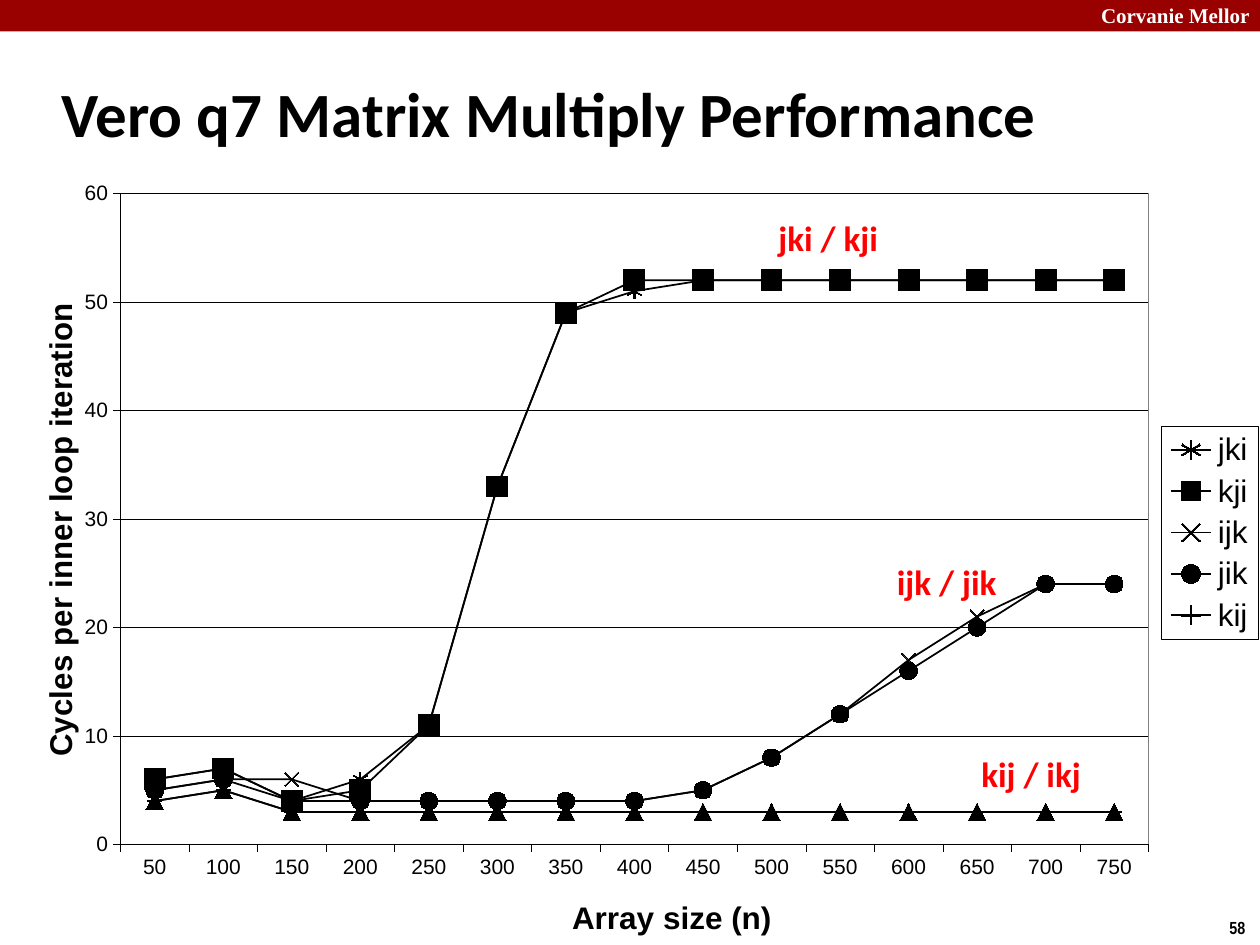
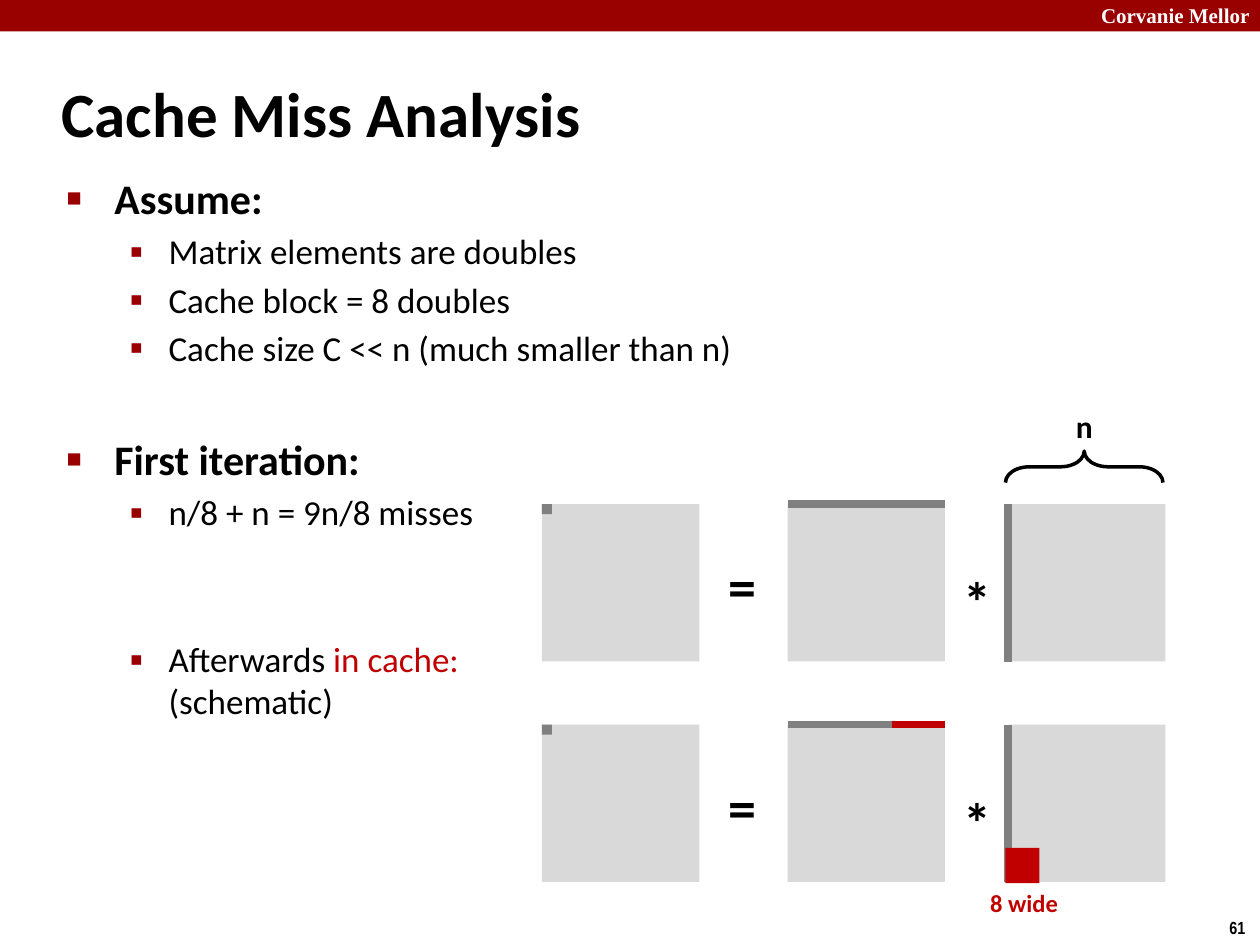
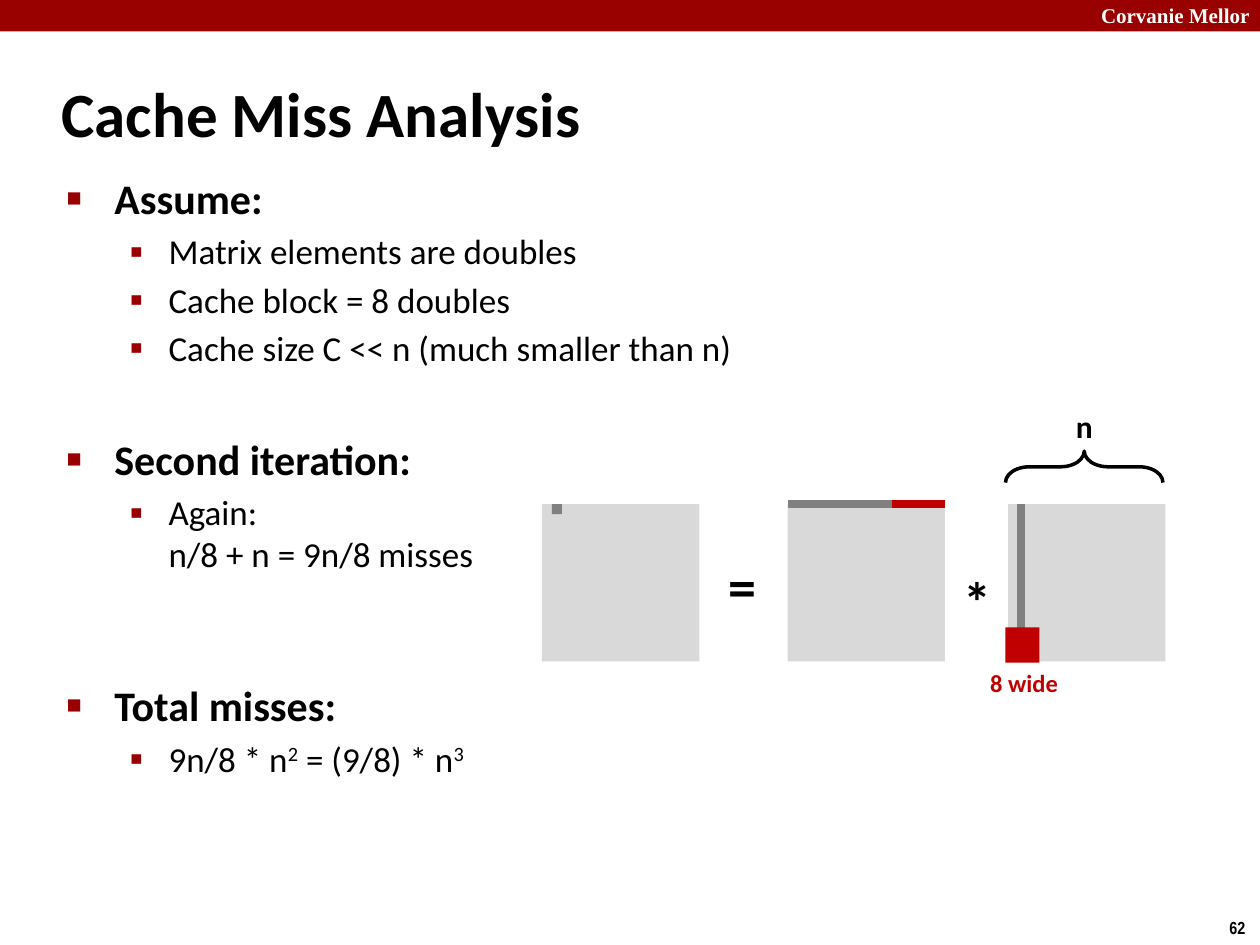
from pptx import Presentation
from pptx.chart.data import CategoryChartData
from pptx.dml.color import RGBColor
from pptx.enum.chart import XL_CHART_TYPE, XL_LEGEND_POSITION, XL_MARKER_STYLE, XL_TICK_MARK
from pptx.enum.shapes import MSO_CONNECTOR, MSO_SHAPE
from pptx.enum.text import MSO_ANCHOR
from pptx.oxml import parse_xml
from pptx.oxml.ns import nsdecls, qn
from pptx.util import Inches, Pt

BAND_RED, CACHE_RED, LABEL_RED = "990000", "C00000", "FF0000"
BLACK, WHITE, MATRIX_GREY, ACCESS_GREY = "000000", "FFFFFF", "D9D9D9", "808080"
SIDE = 1.25  # side of a matrix, inches

# bullet, its size in %, left margin and hanging indent in inches, font
LEVELS = [
    ("■", 60, 0.38, 0.38, {"size": Pt(24), "bold": True}),
    ("▪", 110, 0.81, 0.31, {"size": Pt(20), "bold": False}),
]

ASSUMPTIONS = [
    (0, 0, ["Assume:"]),
    (1, 4, ["Matrix elements are doubles"]),
    (1, 3.6, ["Cache block = 8 doubles"]),
    (1, 3.6, ["Cache size C << n (much smaller than n)"]),
]
FIRST_ITERATION = [
    (0, 37, ["First iteration:"]),
    (1, 4, ["n/8 + n = 9n/8 misses"]),
    (1, 60, ["Afterwards ", ("in cache:\n", "red"), "(schematic)"]),
]
SECOND_ITERATION = [
    (0, 37, ["Second iteration:"]),
    (1, 4, ["Again:\nn/8 + n = 9n/8 misses"]),
    (0, 60, ["Total misses:"]),
    (1, 4, ["9n/8 * n", ("2", "super"), " = (9/8) * n", ("3", "super")]),
]

ARRAY_SIZES = range(50, 751, 50)
# loop order: marker, marker size, cycles per iteration
LOOP_ORDERS = {
    "jki": ("STAR", 8, [6, 7, 4, 6, 11, 33, 49, 51] + [52] * 7),
    "kji": ("SQUARE", 12, [6, 7, 4, 5, 11, 33, 49] + [52] * 8),
    "ijk": ("X", 8, [5, 6, 6, 4, 4, 4, 4, 4, 5, 8, 12, 17, 21, 24, 24]),
    "jik": ("CIRCLE", 10, [5, 6, 4, 4, 4, 4, 4, 4, 5, 8, 12, 16, 20, 24, 24]),
    "kij": ("PLUS", 8, [4, 5] + [3] * 13),
    "ikj": ("TRIANGLE", 10, [4, 5] + [3] * 13),
}


def rgb(value):
    return RGBColor.from_string(value)


def set_font(font, color, **values):
    for name, value in values.items():
        setattr(font, name, value)
    font.color.rgb = rgb(color)


def set_line(line, color, width):
    line.color.rgb = rgb(color)
    line.width = Pt(width)


def place(element, index, inner=False, **fractions):
    """Give a chart part a manual layout, as fractions of the chart."""
    for layout in element.findall(qn("c:layout")):
        element.remove(layout)
    target = '<c:layoutTarget val="inner"/>' if inner else ""
    modes = "".join(f'<c:{k}Mode val="edge"/>' for k in fractions if k in "xy")
    values = "".join(f'<c:{k} val="{v}"/>' for k, v in fractions.items())
    element.insert(index, parse_xml(
        f'<c:layout {nsdecls("c")}><c:manualLayout>{target}{modes}{values}'
        '</c:manualLayout></c:layout>'))


class Deck:
    """Holds the presentation, its style and the slide being filled."""

    def __init__(self):
        self.presentation = Presentation()
        self.presentation.slide_width = Inches(10)
        self.presentation.slide_height = Inches(7.5)
        self.shapes = None

    def slide(self, title, number):
        layout = self.presentation.slide_layouts[6]
        self.shapes = self.presentation.slides.add_slide(layout).shapes
        self.block(0, 0, 10, 0.25, BAND_RED)
        self.label("Corvanie Mellor", 8.64, -0.03, 1.43, 0.3, 12, WHITE, "Times New Roman")
        self.label(str(number), 9.66, 7.23, 0.34, 0.27, 10, font="Arial Narrow")
        self.label(title, 0.39, 0.48, 8.3, 0.83, 36, anchor=MSO_ANCHOR.MIDDLE)

    def label(self, text, left, top, width, height, size, color=BLACK,
              font="Calibri", anchor=MSO_ANCHOR.TOP):
        frame = self.shapes.add_textbox(*map(Inches, (left, top, width, height))).text_frame
        frame.word_wrap = False
        frame.vertical_anchor = anchor
        run = frame.paragraphs[0].add_run()
        run.text = text
        set_font(run.font, color, name=font, size=Pt(size), bold=True)

    def block(self, left, top, width, height, color):
        block = self.shapes.add_shape(
            MSO_SHAPE.RECTANGLE, *map(Inches, (left, top, width, height)))
        block.shadow.inherit = False
        block.fill.solid()
        block.fill.fore_color.rgb = rgb(color)
        block.line.fill.background()

    def stroke(self, x1, y1, x2, y2, color):
        stroke = self.shapes.add_connector(
            MSO_CONNECTOR.STRAIGHT, *map(Inches, (x1, y1, x2, y2)))
        set_line(stroke.line, color, 4.5)
        stroke._element.spPr.append(parse_xml(f'<a:effectLst {nsdecls("a")}/>'))

    def bullets(self, items):
        """Each item is a level, the space before in points, and its runs."""
        frame = self.shapes.add_textbox(
            *map(Inches, (0.43, 1.32, 8.64, 3.34))).text_frame
        frame.word_wrap = True
        for i, (level, gap, runs) in enumerate(items):
            paragraph = frame.add_paragraph() if i else frame.paragraphs[0]
            paragraph.level = level
            paragraph.space_before = Pt(gap)
            bullet, percent, margin, hanging, font = LEVELS[level]
            properties = paragraph._p.get_or_add_pPr()
            properties.set("marL", str(Inches(margin)))
            properties.set("indent", str(-Inches(hanging)))
            for xml in (f'<a:buClr {nsdecls("a")}><a:srgbClr val="{BAND_RED}"/></a:buClr>',
                        f'<a:buSzPct {nsdecls("a")} val="{percent * 1000}"/>',
                        f'<a:buFont {nsdecls("a")} typeface="Arial"/>',
                        f'<a:buChar {nsdecls("a")} char="{bullet}"/>'):
                properties.append(parse_xml(xml))
            for piece in runs:
                text, style = (piece, "") if isinstance(piece, str) else piece
                for j, part in enumerate(text.split("\n")):
                    if j:
                        paragraph.add_line_break()
                    if not part:
                        continue
                    run = paragraph.add_run()
                    run.text = part
                    set_font(run.font, CACHE_RED if style == "red" else BLACK,
                             name="Calibri", **font)
                    if style == "super":
                        run._r.get_or_add_rPr().set("baseline", "30000")

    def width_brace(self):
        brace = self.shapes.add_shape(
            MSO_SHAPE.LEFT_BRACE, *map(Inches, (8.48, 3.08, 0.25, SIDE)))
        brace.shadow.inherit = False
        brace.rotation = 90
        brace.adjustments[0] = 0.75
        brace.fill.background()
        set_line(brace.line, BLACK, 2)
        self.label("n", 8.44, 3.18, 0.34, 0.4, 18)

    def product(self, top, cell=4.3, column=8, cached=True):
        """Draw C = A * B with the cell, row and column being accessed."""
        result, row, factor = 4.3, 6.25, 8
        for left in (result, row, factor):
            self.block(left, top, SIDE, SIDE, MATRIX_GREY)
        self.stroke(row, top, row + SIDE, top, ACCESS_GREY)
        self.stroke(column, top, column, top + SIDE, ACCESS_GREY)
        self.block(cell, top, 0.08, 0.08, ACCESS_GREY)
        self.label("=", 5.68, top + 0.33, 0.43, 0.64, 32)
        self.label("*", 7.55, top + 0.45, 0.43, 0.64, 32)
        if cached:
            self.stroke(7.08, top, row + SIDE, top, CACHE_RED)
            self.block(7.98, top + 0.98, 0.27, 0.28, CACHE_RED)
            self.label("8 wide", 7.76, top + SIDE, 0.74, 0.34, 14, CACHE_RED)

    def cycles_chart(self):
        data = CategoryChartData()
        data.categories = [str(size) for size in ARRAY_SIZES]
        for order, (_, _, cycles) in LOOP_ORDERS.items():
            data.add_series(order, cycles)
        chart = self.shapes.add_chart(
            XL_CHART_TYPE.LINE_MARKERS, *map(Inches, (0.17, 1.29, 9.83, 6.21)), data).chart
        chart.has_title = False
        set_font(chart.font, BLACK, name="Arial", size=Pt(10))

        plot = chart.plots[0]
        plot.vary_by_categories = False
        for series, (marker, size, _) in zip(plot.series, LOOP_ORDERS.values()):
            series.smooth = False
            set_line(series.format.line, BLACK, 1)
            series.marker.style = XL_MARKER_STYLE[marker]
            series.marker.size = size
            series.marker.format.fill.solid()
            series.marker.format.fill.fore_color.rgb = rgb(BLACK)
            set_line(series.marker.format.line, BLACK, 0.75)

        for axis, title, x, y in (
                (chart.category_axis, "Array size (n)", 0.44, 0.94),
                (chart.value_axis, "Cycles per inner loop iteration", 0.01, 0.18)):
            axis.major_tick_mark = XL_TICK_MARK.OUTSIDE
            axis.minor_tick_mark = XL_TICK_MARK.NONE
            set_line(axis.format.line, BLACK, 0.25)
            set_font(axis.tick_labels.font, BLACK, name="Arial", size=Pt(12))
            run = axis.axis_title.text_frame.paragraphs[0].add_run()
            run.text = title
            set_font(run.font, BLACK, name="Arial", size=Pt(18), bold=True)
            place(axis.axis_title._element, 1, x=x, y=y)
        scale = {"minimum_scale": 0, "maximum_scale": 60, "major_unit": 10}
        for name, value in scale.items():
            setattr(chart.value_axis, name, value)
        set_line(chart.value_axis.major_gridlines.format.line, BLACK, 0.25)

        area = chart._chartSpace.chart.plotArea
        place(area, 0, inner=True, x=0.08, y=0.04, w=0.83, h=0.84)
        area.append(parse_xml(
            f'<c:spPr {nsdecls("c", "a")}><a:solidFill><a:srgbClr val="{WHITE}"/></a:solidFill>'
            f'<a:ln w="{Pt(0.75)}"><a:solidFill><a:srgbClr val="{ACCESS_GREY}"/></a:solidFill>'
            '</a:ln></c:spPr>'))
        self.cycles_legend(chart)

    def cycles_legend(self, chart):
        """List every loop order but the last, which has no entry."""
        chart.has_legend = True
        legend = chart.legend
        legend.position = XL_LEGEND_POSITION.RIGHT
        legend.include_in_layout = False
        set_font(legend.font, BLACK, name="Arial", size=Pt(18))
        element = legend._element
        element.insert(1, parse_xml(
            f'<c:legendEntry {nsdecls("c")}><c:idx val="{len(LOOP_ORDERS) - 1}"/>'
            '<c:delete val="1"/></c:legendEntry>'))
        place(element, 2, x=0.92, y=0.34)
        element.find(qn("c:txPr")).addprevious(parse_xml(
            f'<c:spPr {nsdecls("c", "a")}><a:ln w="{Pt(0.25)}"><a:solidFill>'
            f'<a:srgbClr val="{BLACK}"/></a:solidFill></a:ln></c:spPr>'))


def main():
    deck = Deck()

    deck.slide("Vero q7 Matrix Multiply Performance", 58)
    deck.cycles_chart()
    for pair, left, top in (("jki / kji", 6.08, 1.67),
                            ("ijk / jik", 7.02, 4.4),
                            ("kij / ikj", 7.69, 5.92)):
        deck.label(pair, left, top, 1, 0.44, 20, LABEL_RED)

    deck.slide("Cache Miss Analysis", 61)
    deck.bullets(ASSUMPTIONS + FIRST_ITERATION)
    deck.width_brace()
    deck.product(4, cached=False)
    deck.product(5.75)

    deck.slide("Cache Miss Analysis", 62)
    deck.bullets(ASSUMPTIONS + SECOND_ITERATION)
    deck.width_brace()
    deck.product(4, cell=4.38, column=8.1)

    deck.presentation.save("out.pptx")


if __name__ == "__main__":
    main()
